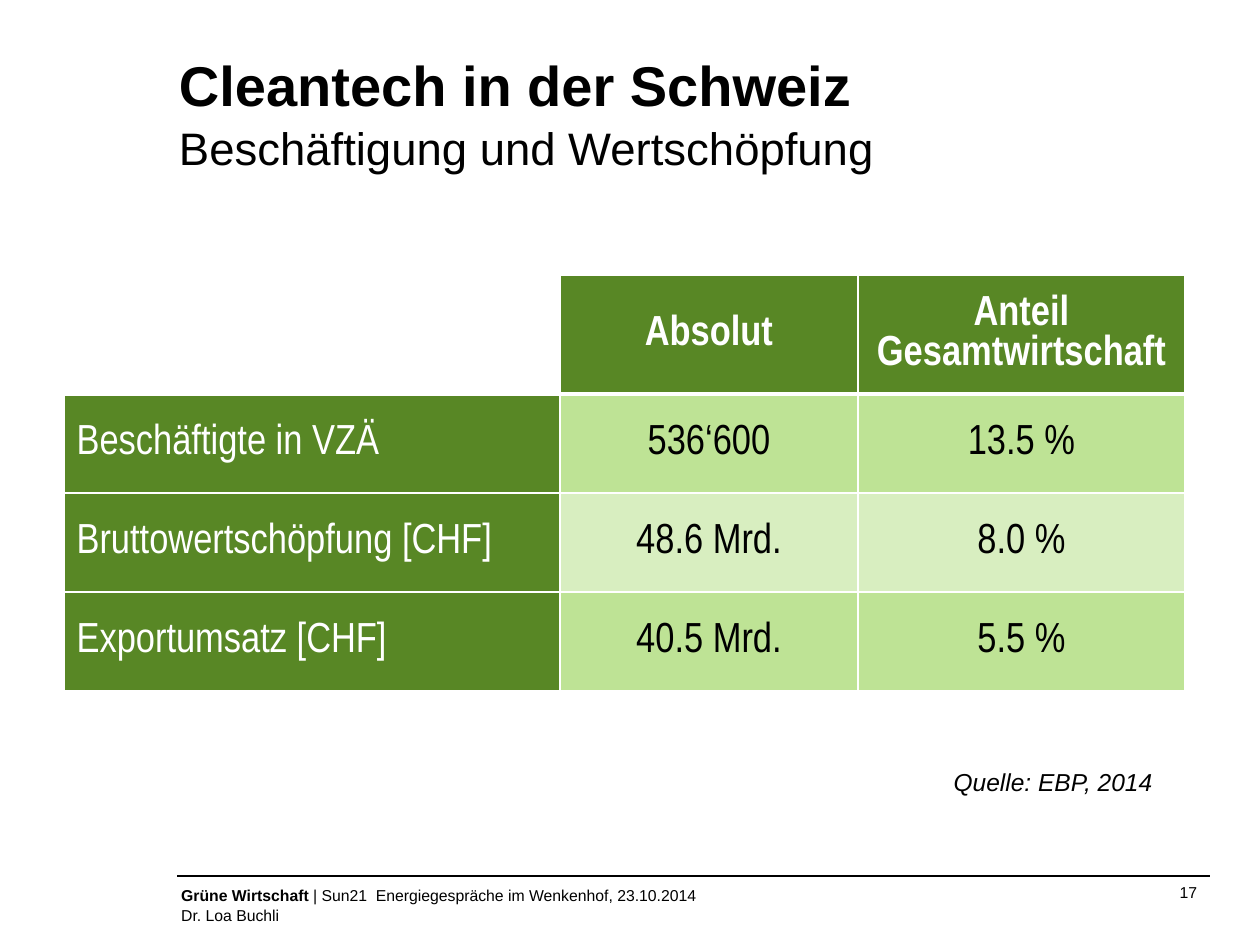
from lxml.etree import SubElement
from pptx import Presentation
from pptx.dml.color import RGBColor
from pptx.enum.shapes import MSO_CONNECTOR, MSO_SHAPE
from pptx.enum.text import MSO_ANCHOR, PP_ALIGN
from pptx.oxml import parse_xml
from pptx.oxml.ns import nsdecls, qn
from pptx.util import Pt

PX = 914400 // 126
GREEN, MID_GREEN, PALE_GREEN = "588725", "BEE395", "D8EEC0"
BLACK, WHITE = "000000", "FFFFFF"


def color(hex_code):
    return RGBColor.from_string(hex_code)


def add_run(paragraph, text, size, hex_code=BLACK, bold=False, italic=False, font="Arial"):
    run = paragraph.add_run()
    run.text = text
    run.font.name, run.font.size = font, Pt(size)
    run.font.bold, run.font.italic = bold, italic
    run.font.color.rgb = color(hex_code)


prs = Presentation()
prs.slide_width, prs.slide_height = 1260 * PX, 945 * PX
slide = prs.slides.add_slide(prs.slide_layouts[6])
shapes = slide.shapes

# Footer
page_number = shapes.add_textbox(888 * PX, 882 * PX, 309 * PX, 20 * PX).text_frame
footer_line = shapes.add_connector(
    MSO_CONNECTOR.STRAIGHT, 1210 * PX, 876 * PX, 177 * PX, 876 * PX)
footer_line.line.color.rgb = color(BLACK)
footer_line.line.width = Pt(0.75)
SubElement(footer_line._element.spPr, qn("a:effectLst"))

footer_shape = shapes.add_shape(
    MSO_SHAPE.OCTAGON, 169 * PX, 873 * PX, 828 * PX, 84 * PX)
footer_shape.adjustments[0] = 0.29
footer_shape.shadow.inherit = False
footer_shape.fill.background()
footer_shape.line.fill.background()
footer = footer_shape.text_frame

title = shapes.add_textbox(179 * PX, 44 * PX, 1028 * PX, 136 * PX).text_frame

for frame in (page_number, footer, title):
    frame.word_wrap = True
    frame.vertical_anchor = MSO_ANCHOR.TOP
    frame.margin_left = frame.margin_right = frame.margin_top = frame.margin_bottom = 0
    frame.paragraphs[0].alignment = PP_ALIGN.LEFT
    frame.paragraphs[0].line_spacing = 1.05

page_number.paragraphs[0].alignment = PP_ALIGN.RIGHT
add_run(page_number.paragraphs[0], "17", 9)

event = footer.paragraphs[0]
add_run(event, "Grüne Wirtschaft ", 9, bold=True)
add_run(event, "| Sun21  Energiegespräche im Wenkenhof, 23.10.2014", 9)
event.add_line_break()
add_run(event, "Dr. Loa Buchli", 9)

# Title
title.margin_top = 3 * PX
heading = title.paragraphs[0]
add_run(heading, "Cleantech in der Schweiz", 32, bold=True)
heading.add_line_break()
add_run(heading, "Beschäftigung und Wertschöpfung", 26)

# Source note
source = shapes.add_shape(MSO_SHAPE.RECTANGLE, 868 * PX, 760 * PX, 297 * PX, 43 * PX)
source.shadow.inherit = False
source.fill.solid()
source.fill.fore_color.rgb = color(WHITE)
source.line.fill.background()
source.text_frame.word_wrap = True
source.text_frame.paragraphs[0].alignment = PP_ALIGN.RIGHT
add_run(source.text_frame.paragraphs[0], "Quelle: EBP, 2014", 14, italic=True)

# Key figures
rows = [
    ("", "Absolut", "Anteil Gesamtwirtschaft"),
    ("Beschäftigte in VZÄ", "536‘600", "13.5 %"),
    ("Bruttowertschöpfung [CHF]", "48.6 Mrd.", "8.0 %"),
    ("Exportumsatz [CHF]", "40.5 Mrd.", "5.5 %"),
]
col_widths = (496, 298, 327)
row_heights = (119, 99, 99, 99)
figures = shapes.add_table(
    len(rows), len(col_widths), 64 * PX, 275 * PX,
    sum(col_widths) * PX, sum(row_heights) * PX).table
for column, width in zip(figures.columns, col_widths):
    column.width = width * PX
for row, height in zip(figures.rows, row_heights):
    row.height = height * PX

for r, texts in enumerate(rows):
    for c, text in enumerate(texts):
        cell = figures.cell(r, c)
        cell.vertical_anchor = MSO_ANCHOR.MIDDLE
        is_header = r == 0
        is_label = is_header or c == 0

        # Borders come before the fill in a cell's properties
        tc_pr = cell._tc.get_or_add_tcPr()
        for side in "LRTB":
            heavy = (is_header and side == "B") or (r == 1 and side == "T")
            tc_pr.append(parse_xml(
                f'<a:ln{side} {nsdecls("a")} w="{Pt(3 if heavy else 1)}"><a:solidFill>'
                f'<a:srgbClr val="{WHITE}"/></a:solidFill></a:ln{side}>'))

        if not text:
            cell.fill.background()
            continue
        cell.fill.solid()
        band = MID_GREEN if r % 2 else PALE_GREEN
        cell.fill.fore_color.rgb = color(GREEN if is_label else band)
        paragraph = cell.text_frame.paragraphs[0]
        paragraph.alignment = PP_ALIGN.CENTER if c else PP_ALIGN.LEFT
        add_run(paragraph, text, 24, WHITE if is_label else BLACK,
                bold=is_header, font="Arial Narrow")

prs.save("out.pptx")
